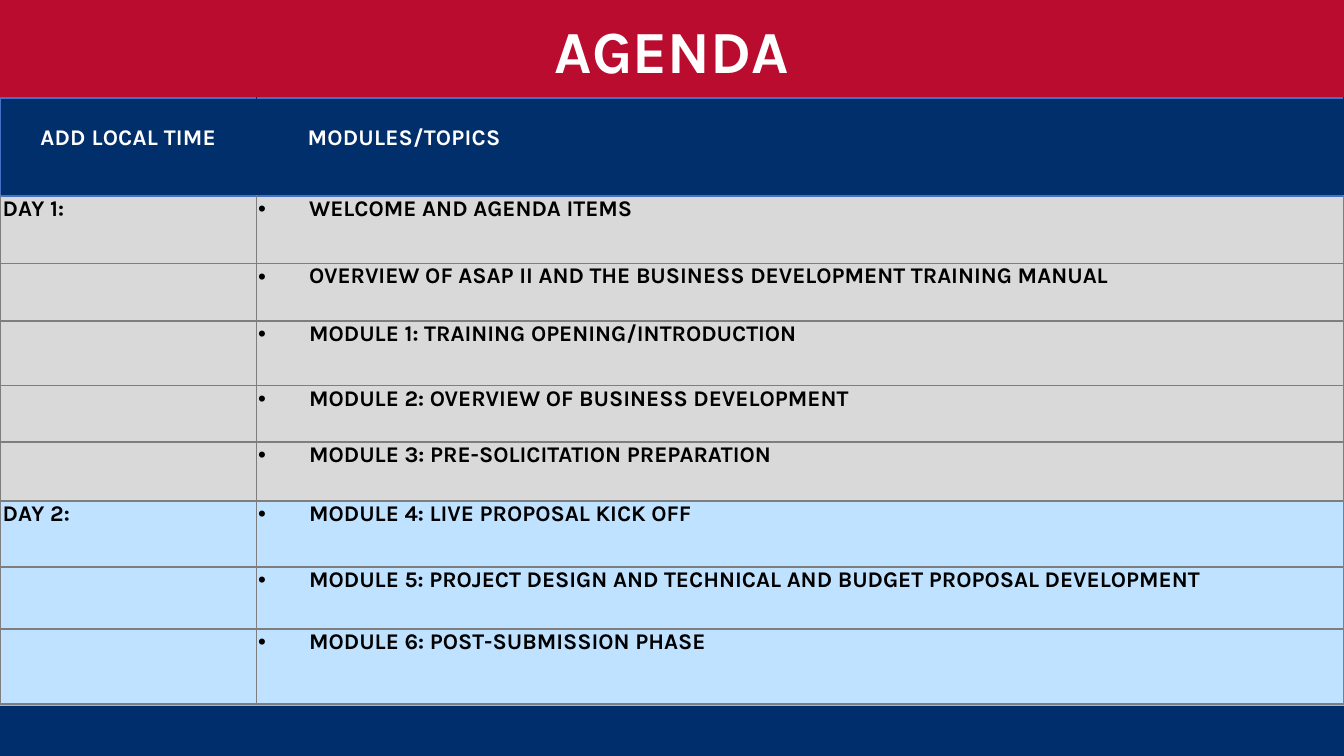
from lxml.etree import SubElement
from pptx import Presentation
from pptx.dml.color import RGBColor
from pptx.enum.shapes import MSO_SHAPE
from pptx.enum.text import MSO_ANCHOR, PP_ALIGN
from pptx.oxml.ns import qn
from pptx.util import Inches, Pt

COLORS = {
    "red": "BA0C2F", "navy": "002F6C", "footer": "002E6C", "white": "FFFFFF",
    "black": "000000", "gray": "D9D9D9", "sky": "BEE2FF",
    "grid": "7E7E7E", "blue": "4471C4",
}
HEADER = ("ADD LOCAL TIME", "MODULES/TOPICS")
DAYS = [
    ("DAY 1:", "gray", [
        "WELCOME AND AGENDA ITEMS",
        "OVERVIEW OF ASAP II AND THE BUSINESS DEVELOPMENT TRAINING MANUAL",
        "MODULE 1: TRAINING OPENING/INTRODUCTION",
        "MODULE 2: OVERVIEW OF BUSINESS DEVELOPMENT",
        "MODULE 3: PRE-SOLICITATION PREPARATION",
    ]),
    ("DAY 2:", "sky", [
        "MODULE 4: LIVE PROPOSAL KICK OFF",
        "MODULE 5: PROJECT DESIGN AND TECHNICAL AND BUDGET PROPOSAL DEVELOPMENT",
        "MODULE 6: POST-SUBMISSION PHASE",
    ]),
]
COLS = [1.91, 8.09]
ROWS = [0.73, 0.5, 0.43, 0.48, 0.42, 0.44, 0.49, 0.46, 0.56]
BAND = 0.74


def rgb(name):
    return RGBColor.from_string(COLORS[name])


def write(tf, text, size=12, color="black", align=PP_ALIGN.LEFT,
          left=0, indent=0, bullet=False, spacing=0):
    p = tf.paragraphs[0]
    p.alignment = align
    pPr = p._p.get_or_add_pPr()
    pPr.set("marL", str(Inches(left)))
    pPr.set("indent", str(Inches(indent)))
    if bullet:
        SubElement(pPr, qn("a:buFont"), typeface="Arial")
        SubElement(pPr, qn("a:buChar"), char="•")
    r = p.add_run()
    r.text = text
    r.font.name, r.font.size, r.font.bold = "Karla", Pt(size), True
    r.font.color.rgb = rgb(color)
    if spacing:
        r._r.get_or_add_rPr().set("spc", str(int(spacing * 100)))


prs = Presentation()
prs.slide_width, prs.slide_height = Inches(10), Inches(5.625)
W, H = prs.slide_width, prs.slide_height
s = prs.slides.add_slide(prs.slide_layouts[6])

footer_top = Inches(5.25)
bars = []
for top, height, color in [(footer_top, H - footer_top, "footer"),
                           (0, Inches(BAND), "red")]:
    sp = s.shapes.add_shape(MSO_SHAPE.RECTANGLE, 0, top, W, height)
    sp.shadow.inherit = False
    sp.fill.solid()
    sp.fill.fore_color.rgb = rgb(color)
    sp.line.fill.background()
    bars.append(sp)

tf = bars[-1].text_frame
tf.word_wrap = True
tf.vertical_anchor = MSO_ANCHOR.MIDDLE
tf.margin_left = tf.margin_right = Inches(0.07)
tf.margin_top = tf.margin_bottom = Inches(0.04)
write(tf, "AGENDA", size=32, color="white", align=PP_ALIGN.CENTER)

rows = [(*HEADER, "navy")]
for day, fill, topics in DAYS:
    for i, topic in enumerate(topics):
        rows.append((day if i == 0 else "", topic, fill))

frame = s.shapes.add_table(len(ROWS), len(COLS), 0, Inches(0.73), W, Inches(sum(ROWS)))
table = frame.table
table.first_row = table.horz_banding = False
for col, width in zip(table.columns, COLS):
    col.width = Inches(width)
for row, height in zip(table.rows, ROWS):
    row.height = Inches(height)

for i, (time, topic, fill) in enumerate(rows):
    for j, text in enumerate((time, topic)):
        cell = table.cell(i, j)
        cell.margin_left = cell.margin_right = cell.margin_bottom = 0
        cell.margin_top = Inches(0.2 if i == 0 else 0)
        tcPr = cell._tc.get_or_add_tcPr()
        for side in "LRTB":
            line = "grid"
            if i == 0:
                inner = (side, j) in (("R", 0), ("L", 1), ("R", 1))
                line = "navy" if inner else "blue"
            elif i == 1 and side == "T":
                line = "blue"
            ln = SubElement(tcPr, qn(f"a:ln{side}"), w=str(Pt(1)))
            solid = SubElement(ln, qn("a:solidFill"))
            SubElement(solid, qn("a:srgbClr"), val=COLORS[line])
        cell.fill.solid()
        cell.fill.fore_color.rgb = rgb(fill)
        tf = cell.text_frame
        if i == 0:
            write(tf, text, color="white", spacing=0.1, left=0.38 * j,
                  align=PP_ALIGN.LEFT if j else PP_ALIGN.CENTER)
        elif j == 1:
            write(tf, text, left=0.39, indent=-0.38, bullet=True)
        elif text:
            write(tf, text, left=0.02)

prs.save("out.pptx")
